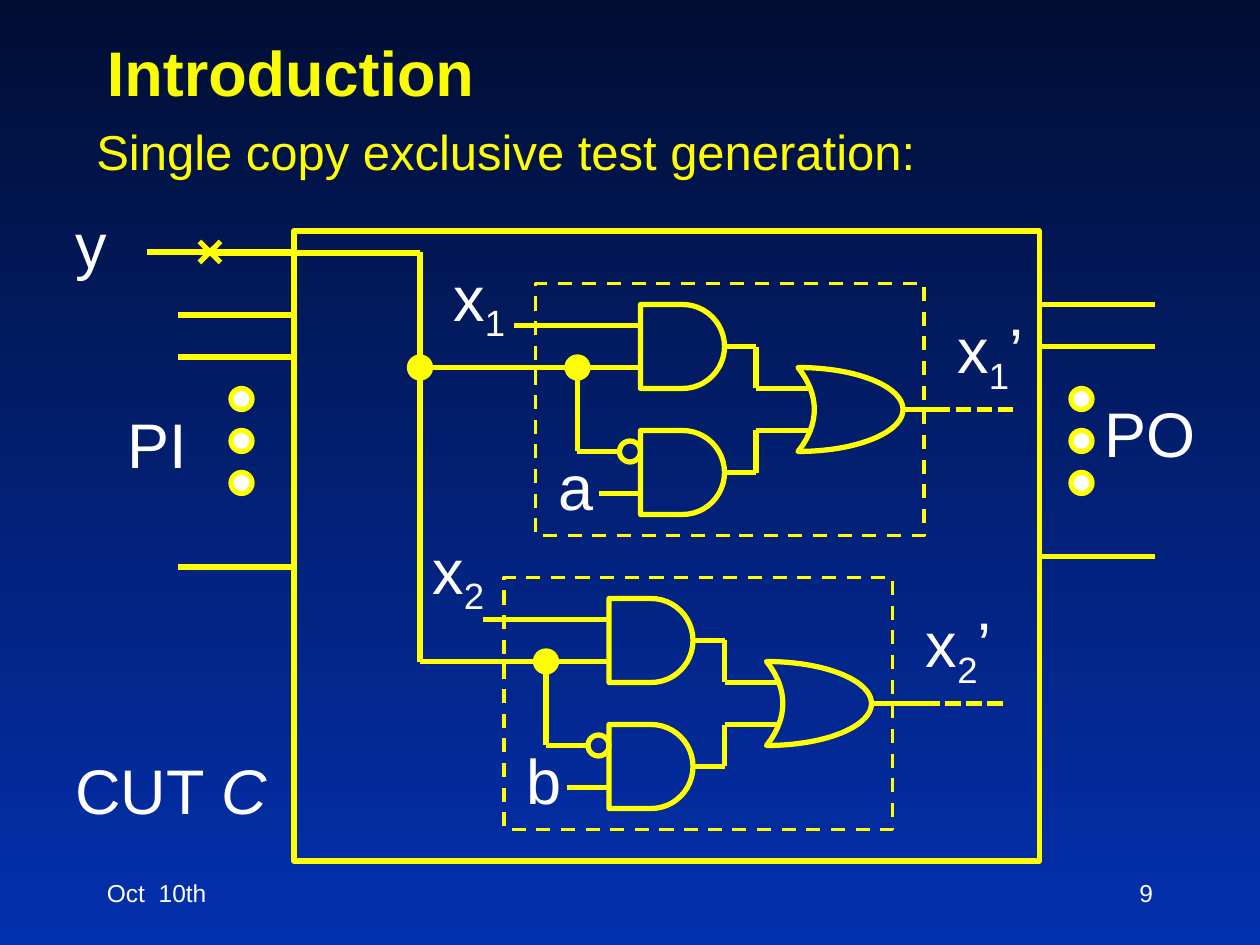
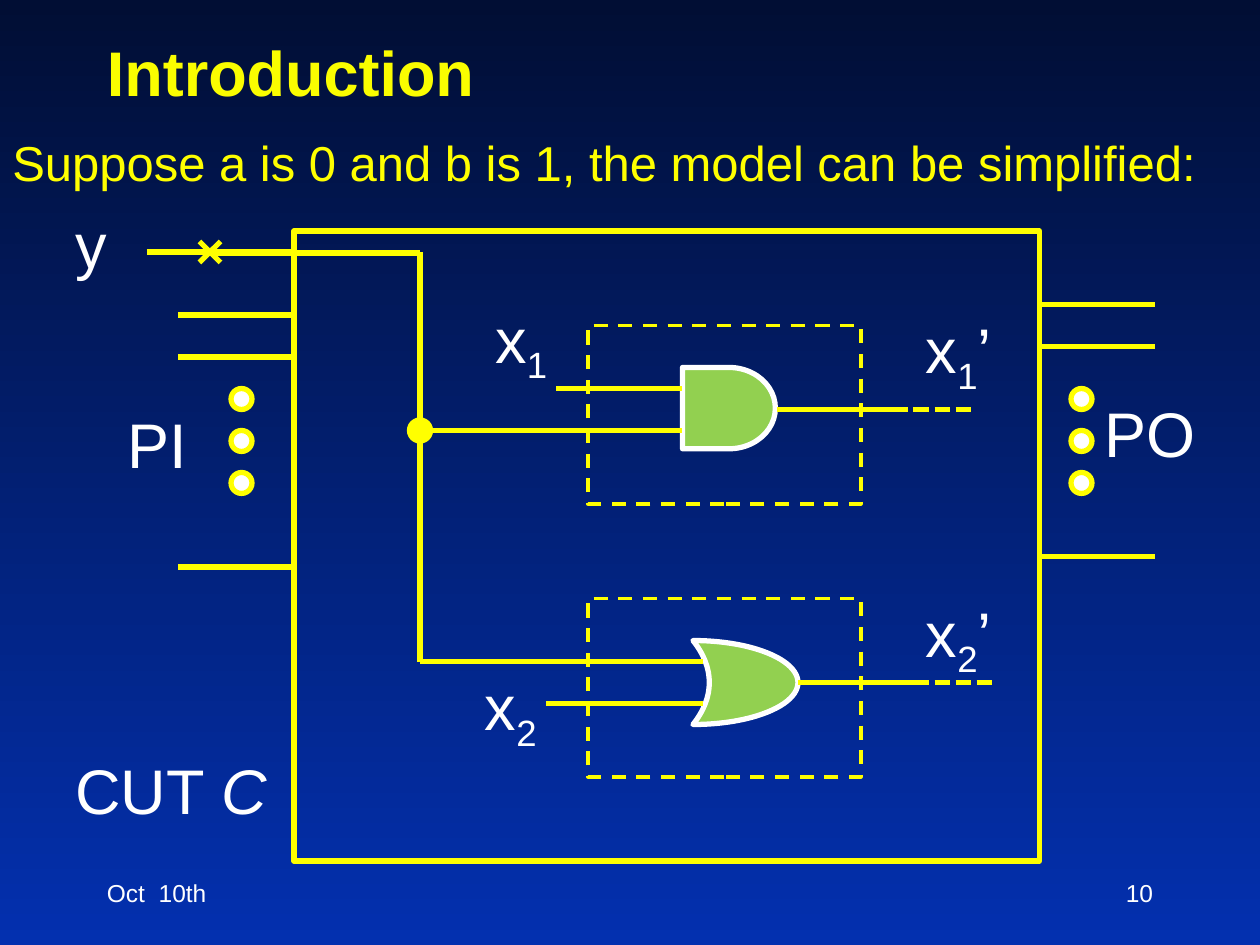
"""Build two slides on exclusive test generation circuits, laid out on a grid of twelfths of an inch."""
from pptx import Presentation, util as u
from pptx.dml.color import RGBColor
from pptx.enum import dml, shapes, text
from pptx.oxml.ns import qn

hue = RGBColor.from_string
unit = u.Cm(2.54 / 12)
GOLD, TITLE, WHITE, GREEN = "FFFF00", "FAFD00", "FFFFFF", "92D050"
NIGHT, BLUE = "010E34", "0330AF"
RECT, DOT, RING = shapes.MSO_SHAPE.RECTANGLE, shapes.MSO_SHAPE.FLOWCHART_CONNECTOR, shapes.MSO_SHAPE.OVAL
AND, OR = shapes.MSO_SHAPE.FLOWCHART_DELAY, shapes.MSO_SHAPE.MOON
DASH, SHORT = dml.MSO_LINE.DASH, dml.MSO_LINE.SQUARE_DOT
TOP, MID, LOW = text.MSO_ANCHOR.TOP, text.MSO_ANCHOR.MIDDLE, text.MSO_ANCHOR.BOTTOM
SUB, SLANT = {"baseline": "-25000"}, {"i": "1"}


def draw(page, kind, at, fill=None, edge=GOLD, width=3, dash=None):
    """Draw a preset shape, or a straight wire when kind is None."""
    spots = [round(n * unit) for n in at]
    if kind is None:
        item = page.shapes.add_connector(shapes.MSO_CONNECTOR.STRAIGHT, *spots)
        props = item._element.spPr
        props.append(props.makeelement(qn("a:effectLst"), {}))
    else:
        item = page.shapes.add_shape(kind, *spots)
        item.shadow.inherit = False
        if fill:
            item.fill.solid()
            item.fill.fore_color.rgb = hue(fill)
        else:
            item.fill.background()
    if kind == OR:
        item.adjustments[0] = 0.844
        item._element.spPr.xfrm.set("flipH", "1")
    item.line.color.rgb = hue(edge)
    item.line.width = u.Pt(width)
    if dash:
        item.line.dash_style = dash
    return item


def write(page, at, parts, size=36, color=WHITE, bold=False, anchor=TOP, right=False):
    """Write one line of text from (words, run attributes) parts."""
    frame = page.shapes.add_textbox(*[round(n * unit) for n in at]).text_frame
    frame.word_wrap = True
    frame.vertical_anchor = anchor
    line = frame.paragraphs[0]
    line.alignment = text.PP_ALIGN.RIGHT if right else text.PP_ALIGN.LEFT
    line.font.name, line.font.size, line.font.bold = "Arial", u.Pt(size), bold
    line.font.color.rgb = hue(color)
    for words, style in parts:
        run = line.add_run()
        run.text = words
        for key, value in style.items():
            run._r.get_or_add_rPr().set(key, value)


deck = Presentation()
deck.slide_width, deck.slide_height = u.Cm(25.4), u.Cm(19.05)
pages = []
for num, lead, left, top in [
    ("9", "Single copy exclusive test generation:", 8, 11),
    ("10", "Suppose a is 0 and b is 1, the model can be simplified:", 0, 12),
]:
    page = deck.slides.add_slide(deck.slide_layouts[6])
    pages.append(page)
    back = page.background.fill
    back.gradient()
    back.gradient_angle = 270
    for stop, shade in zip(back.gradient_stops, (NIGHT, BLUE)):
        stop.color.rgb = hue(shade)

    write(page, (9, 3, 100, 8), [("Introduction", {})], color=TITLE, bold=True, anchor=LOW)
    write(page, (left, top, 120 - left, 7), [(lead, {})], size=28, color=GOLD)
    write(page, (9, 82, 25, 6), [("Oct  10th", {})], size=14, anchor=MID)
    write(page, (86, 82, 25, 6), [(num, {})], size=14, anchor=MID, right=True)

    draw(page, RECT, (28, 22, 71, 60))
    for start, end, first, dots in [(17, 28, 30, 22), (99, 110, 29, 102)]:
        for drop in (0, 4, 24):
            draw(page, None, (start, first + drop, end, first + drop))
        for y in (37, 41, 45):
            draw(page, DOT, (dots, y, 2, 2), WHITE)
    for wire in [(14, 24, 28, 24), (19, 23, 21, 25), (21, 23, 19, 25), (20, 24.1, 40, 24.1), (40, 63, 40, 24)]:
        draw(page, None, wire)
    for words, x, y, wide in [("y", 6, 19, 6), ("PI", 11, 38, 9), ("PO", 104, 37, 13)]:
        write(page, (x, y, wide, 8.5), [(words, {})])
    write(page, (6, 71, 21, 8.5), [("CUT ", {}), ("C", SLANT)])

full, brief = pages

draw(full, DOT, (39, 34, 2, 2), GOLD)
for x, y, index, free, name, end in [
    (51, 27, "1", "a", (42, 24), 89),
    (48, 55, "2", "b", (40, 50), 88),
]:
    draw(full, RECT, (x, y, 37, 24), width=2, dash=DASH)
    for drop, bend in [(2, 10), (14, 14)]:
        gate = draw(full, AND, (x + 10, y + drop, 8, 8))
        out = draw(full, None, (x + 18, y + drop + 4, x + 21, y + drop + 4))
        out.begin_connect(gate, 3)
        draw(full, None, (x + 21, y + drop + 4, x + 21, y + bend))
        draw(full, None, (x + 21, y + bend, x + 26, y + bend))
    draw(full, OR, (x + 25, y + 8, 10, 8))
    draw(full, RING, (x + 8, y + 15, 2, 2))
    draw(full, DOT, (x + 3, y + 7, 2, 2), GOLD)
    for x1, y1, x2, y2 in [(-2, 4, 10, 4), (4, 8, 4, 16), (4, 16, 8, 16), (6, 20, 10, 20)]:
        draw(full, None, (x + x1, y + y1, x + x2, y + y2))
    draw(full, None, (40, y + 8, x + 10, y + 8))
    draw(full, None, (x + 35, y + 12, end, y + 12))
    draw(full, None, (end, y + 12, end + 8, y + 12), dash=SHORT)
    write(full, (*name, 9, 8.5), [("x", {}), (index, SUB)])
    write(full, (x + 1, y + 15, 5, 8.5), [(free, {})])
    write(full, (x + 39, y + 2, 12, 8.5), [("x", {}), (index, SUB), ("’", {})])

for kind, spot, index, y, ins, out, name, prime in [
    (AND, (65, 35, 8.85, 7.75), "1", 31, [(53, 37, 65, 37), (41, 41, 65, 41)], (74, 39, 85), (46, 28), 29),
    (OR, (66, 61, 10, 8), "2", 57, [(40, 63, 67, 63), (52, 67, 67, 67)], (76, 65, 87), (45, 63), 56),
]:
    draw(brief, kind, spot, GREEN, WHITE)
    draw(brief, RECT, (56, y, 26, 17), width=2, dash=DASH)
    for wire in ins:
        draw(brief, None, wire)
    start, level, end = out
    draw(brief, None, (start, level, end, level))
    draw(brief, None, (end, level, end + 8, level), dash=SHORT)
    write(brief, (*name, 9, 8.5), [("x", {}), (index, SUB)])
    write(brief, (87, prime, 12, 8.5), [("x", {}), (index, SUB), ("’", {})])
draw(brief, DOT, (39, 40, 2, 2), GOLD)

deck.save("out.pptx")
